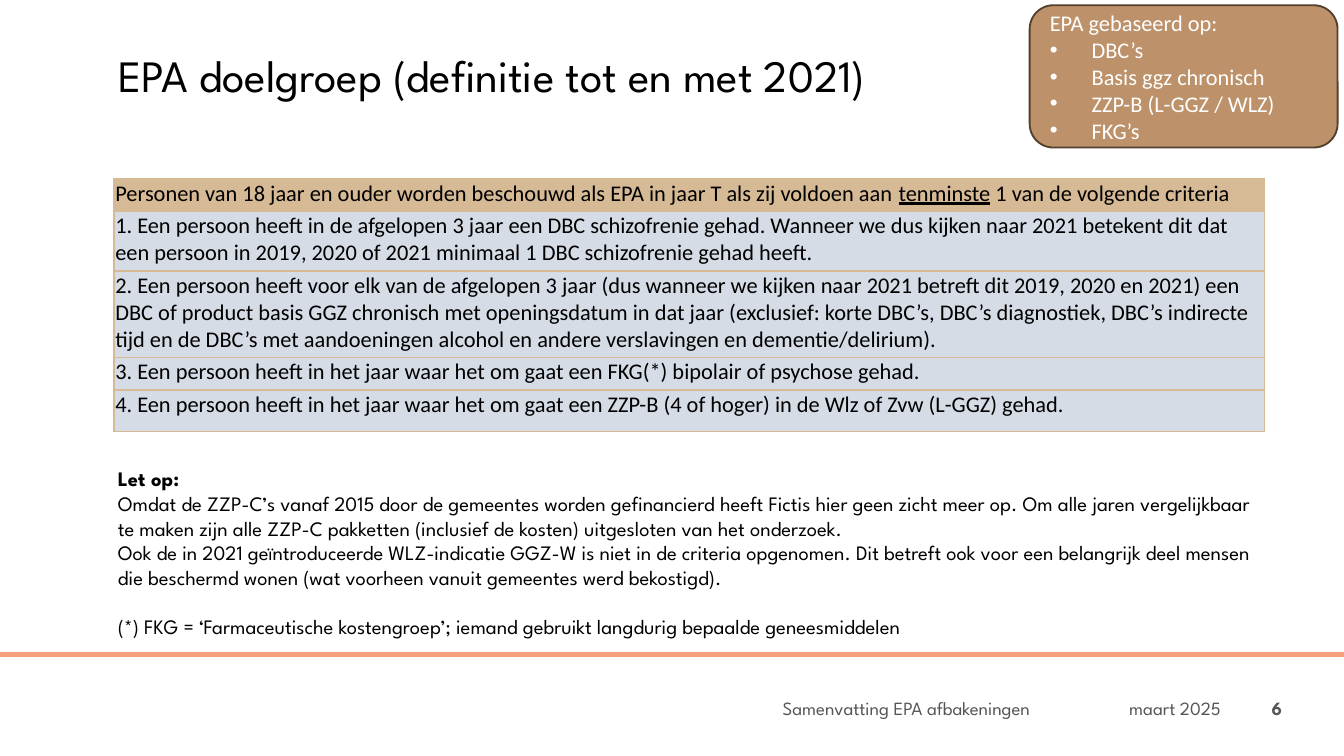
import dataclasses

import lxml.etree
import pptx
import pptx.dml.color
import pptx.enum.shapes
import pptx.enum.text
import pptx.oxml.ns
import pptx.util

Cm = pptx.util.Cm
Pt = pptx.util.Pt
qn = pptx.oxml.ns.qn
ALIGN = pptx.enum.text.PP_ALIGN
ANCHOR = pptx.enum.text.MSO_ANCHOR


@dataclasses.dataclass(frozen=True)
class Theme:
    heading: str = "League Spartan"
    body: str = "Calibri"
    black: str = "000000"
    white: str = "FFFFFF"
    footer: str = "545758"
    number: str = "575855"
    rule: str = "F79F78"
    header: str = "D6B995"
    row: str = "D6DCE5"
    badge: str = "BD926A"
    badge_line: str = "53402E"
    title_size: int = 24
    body_size: int = 12
    note_size: int = 11
    footer_size: int = 10


T = Theme()

CRITERIA = [
    [("Personen van 18 jaar en ouder worden beschouwd als EPA in jaar T als zij voldoen aan ", {}),
     ("tenminste", {"underline": True}),
     (" 1 van de volgende criteria", {})],
    [("1. Een persoon heeft in de afgelopen 3 jaar een DBC schizofrenie gehad. Wanneer we dus "
      "kijken naar 2021 betekent dit dat een persoon in 2019, 2020 of 2021 minimaal 1 DBC "
      "schizofrenie gehad heeft.", {})],
    [("2. Een persoon heeft voor elk van de afgelopen 3 jaar (dus wanneer we kijken naar 2021 "
      "betreft dit 2019, 2020 en 2021) een DBC of product basis GGZ chronisch met openingsdatum "
      "in dat jaar (exclusief: korte DBC’s, DBC’s diagnostiek, DBC’s indirecte tijd en de DBC’s "
      "met aandoeningen alcohol en andere verslavingen en dementie/delirium).", {})],
    [("3. Een persoon heeft in het jaar waar het om gaat een FKG(*) bipolair of psychose gehad.", {})],
    [("4. Een persoon heeft in het jaar waar het om gaat een ZZP-B (4 of hoger) in de Wlz of Zvw "
      "(L-GGZ) gehad.", {})],
]
ROW_HEIGHTS = [0.61, 1.13, 1.64, 0.61, 0.79]

NOTES = [
    [("Let op:", {"bold": True})],
    [("Omdat de ZZP-C’s vanaf 2015 door de gemeentes worden gefinancierd heeft Fictis hier geen "
      "zicht meer op. Om alle jaren vergelijkbaar te maken zijn alle ZZP-C pakketten (inclusief "
      "de kosten) uitgesloten van het onderzoek.", {})],
    [("Ook de in 2021 geïntroduceerde WLZ-indicatie GGZ-W is niet in de criteria opgenomen. Dit "
      "betreft ook voor een belangrijk deel mensen die beschermd wonen (wat voorheen vanuit "
      "gemeentes werd bekostigd).", {})],
    [("(*) FKG = ‘Farmaceutische kostengroep’; iemand gebruikt langdurig bepaalde geneesmiddelen", {})],
]

SOURCES = ["DBC’s", "Basis ggz chronisch", "ZZP-B (L-GGZ / WLZ)", "FKG’s"]


def rgb(value):
    return pptx.dml.color.RGBColor.from_string(value)


def set_attrs(obj, values):
    for name, value in values.items():
        setattr(obj, name, value)


def margins(left, top, right, bottom):
    names = ("margin_left", "margin_top", "margin_right", "margin_bottom")
    return dict(zip(names, map(Cm, (left, top, right, bottom))))


def write(tf, paragraphs, font, size, color, align=ALIGN.LEFT):
    for i, runs in enumerate(paragraphs):
        p = tf.paragraphs[0] if i == 0 else tf.add_paragraph()
        p.alignment = align
        for text, extra in runs:
            r = p.add_run()
            r.text = text
            set_attrs(r.font, {"name": font, "size": Pt(size), **extra})
            r.font.color.rgb = rgb(color)


def add_text(s, box, paragraphs, size, color, align=ALIGN.LEFT, **frame):
    tf = s.shapes.add_textbox(*map(Cm, box)).text_frame
    set_attrs(tf, {"word_wrap": True, **frame})
    write(tf, paragraphs, T.heading, size, color, align)
    return tf


def add_rule(s, y, width):
    line = s.shapes.add_connector(pptx.enum.shapes.MSO_CONNECTOR.STRAIGHT, 0, Cm(y), width, Cm(y))
    line.line.color.rgb = rgb(T.rule)
    line.line.width = Pt(2.75)
    lxml.etree.SubElement(line._element.spPr, qn("a:effectLst"))


def add_borders(cell, color):
    tcPr = cell._tc.get_or_add_tcPr()
    for side in ("L", "R", "T", "B"):
        ln = lxml.etree.SubElement(tcPr, qn(f"a:ln{side}"), w=str(Pt(1)))
        fill = lxml.etree.SubElement(ln, qn("a:solidFill"))
        lxml.etree.SubElement(fill, qn("a:srgbClr"), val=color)


def add_criteria(s, left, top, width):
    frame = s.shapes.add_table(len(CRITERIA), 1, Cm(left), Cm(top), Cm(width), Cm(sum(ROW_HEIGHTS)))
    table = frame.table
    set_attrs(table, {"first_row": False, "horz_banding": False})
    for i, (runs, height) in enumerate(zip(CRITERIA, ROW_HEIGHTS)):
        table.rows[i].height = Cm(height)
        cell = table.cell(i, 0)
        set_attrs(cell, margins(0.02, 0.02, 0.02, 0.08))
        add_borders(cell, T.header)
        cell.fill.solid()
        cell.fill.fore_color.rgb = rgb(T.header if i == 0 else T.row)
        write(cell.text_frame, [runs], T.body, T.body_size, T.black)


def add_bullet(p):
    pPr = p._p.get_or_add_pPr()
    set_indent = {"marL": Cm(0.79), "indent": -Cm(0.79)}
    for name, value in set_indent.items():
        pPr.set(name, str(value))
    lxml.etree.SubElement(pPr, qn("a:buFont"), typeface="Arial")
    lxml.etree.SubElement(pPr, qn("a:buChar"), char="•")


def add_badge(s, box):
    sp = s.shapes.add_shape(pptx.enum.shapes.MSO_SHAPE.ROUNDED_RECTANGLE, *map(Cm, box))
    sp.shadow.inherit = False
    sp.fill.solid()
    sp.fill.fore_color.rgb = rgb(T.badge)
    sp.line.color.rgb = rgb(T.badge_line)
    sp.line.width = Pt(1)
    tf = sp.text_frame
    set_attrs(tf, {"word_wrap": True, "vertical_anchor": ANCHOR.MIDDLE})
    lines = [[(text, {})] for text in ["EPA gebaseerd op:", *SOURCES]]
    write(tf, lines, T.body, T.body_size, T.white)
    for p in tf.paragraphs[1:]:
        add_bullet(p)


def add_footer(s):
    inset = margins(0.25, 0.13, 0, 0.13)
    items = [
        (19.51, 3.56, "maart 2025", T.footer, {}, inset),
        (9.45, 10.01, "Samenvatting EPA afbakeningen", T.footer, {}, inset),
        (23.01, 1.47, "6", T.number, {"bold": True}, {}),
    ]
    for left, width, text, color, fmt, frame in items:
        add_text(s, (left, 13.08, width, 0.61), [[(text, fmt)]], T.footer_size, color,
                 ALIGN.RIGHT, vertical_anchor=ANCHOR.MIDDLE, **frame)


def main():
    prs = pptx.Presentation()
    set_attrs(prs, {"slide_width": Cm(25.4), "slide_height": Cm(14.29)})
    s = prs.slides.add_slide(prs.slide_layouts[6])
    add_rule(s, 12.37, prs.slide_width)
    title = add_text(s, (2.24, 1.02, 20.75, 1.45),
                     [[("EPA doelgroep (definitie tot en met 2021)", {})]],
                     T.title_size, T.black, **margins(0, 0, 0, 0))
    title.paragraphs[0].line_spacing = 0.9
    add_criteria(s, 2.16, 3.38, 21.74)
    add_footer(s)
    notes = add_text(s, (1.98, 8.69, 22.1, 3.56), NOTES, T.note_size, T.black)
    notes.paragraphs[-1].space_before = Pt(13.2)
    add_badge(s, (19.46, 0.1, 5.82, 2.69))
    prs.save("out.pptx")


if __name__ == "__main__":
    main()
